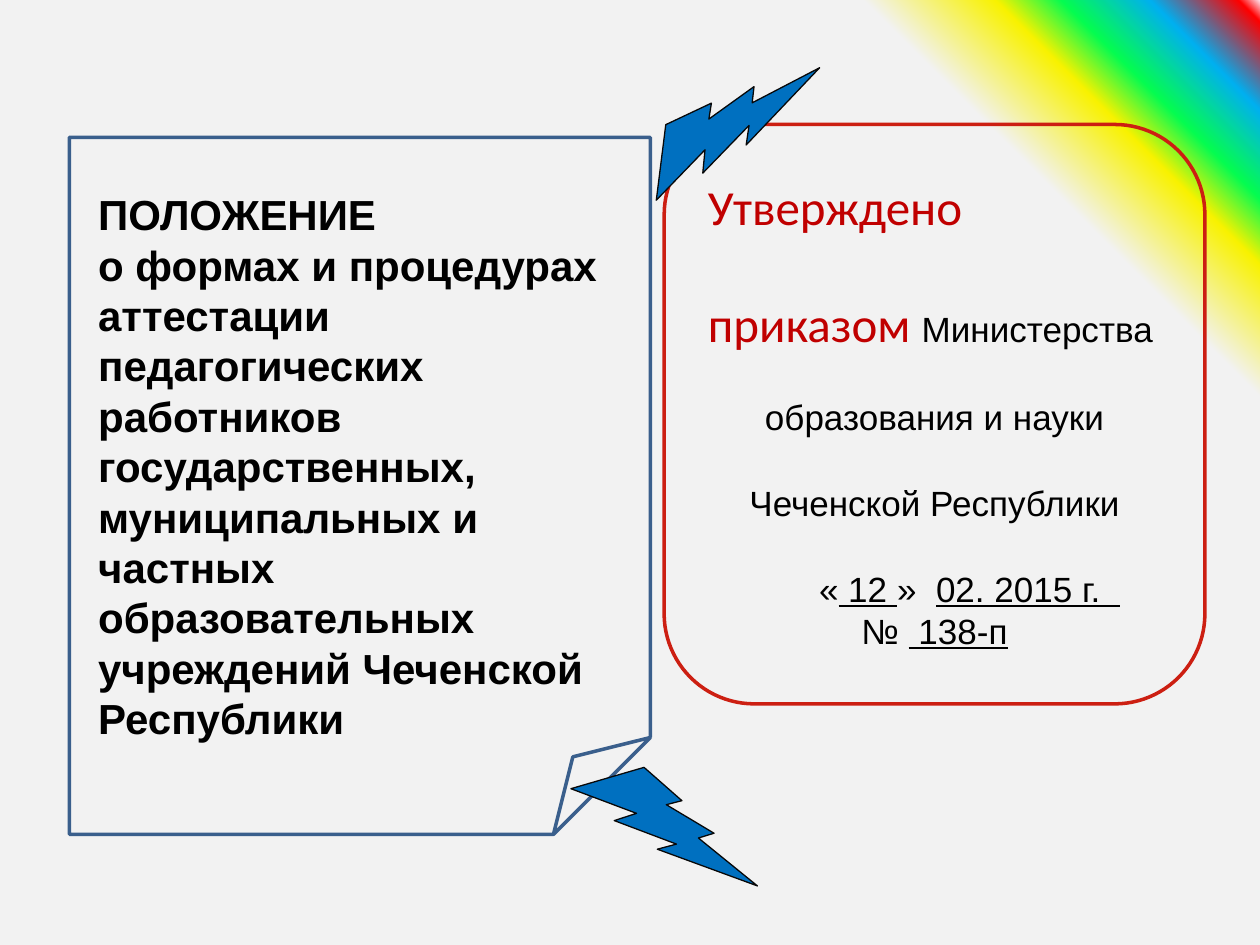
from dataclasses import dataclass

from pptx import Presentation
from pptx.dml.color import RGBColor
from pptx.enum.shapes import MSO_SHAPE
from pptx.enum.text import MSO_ANCHOR, PP_ALIGN
from pptx.oxml import parse_xml
from pptx.oxml.ns import nsdecls
from pptx.util import Cm, Pt


@dataclass(frozen=True)
class Theme:
    ink: str = "000000"
    accent: str = "C00000"
    card_line: str = "3A5F8C"
    order_line: str = "CC1F12"
    bolt: str = "0070C0"
    bolt_line: str = "080808"
    rainbow: tuple = ((82, "F2F2F2"), (88, "F8F200"), (91, "04FC51"),
                      (95, "00B0F0"), (99, "FF0000"), (100, "FEE7F2"))
    heading: int = 28
    title: int = 24
    body: int = 20


def add_run(p, text, size, color, font="Arial", bold=False, underline=False):
    r = p.add_run()
    r.text = text
    r.font.name, r.font.size = font, Pt(size)
    r.font.bold, r.font.underline = bold, underline
    r.font.color.rgb = RGBColor.from_string(color)


class SlideBuilder:
    def __init__(self, prs, theme):
        self.theme = theme
        self.s = prs.slides.add_slide(prs.slide_layouts[6])

    def background(self):
        """Circular rainbow spreading from the bottom left corner."""
        stops = "".join(
            f'<a:gs pos="{pos * 1000}"><a:srgbClr val="{color}"/></a:gs>'
            for pos, color in self.theme.rainbow)
        bg = parse_xml(
            f'<p:bg {nsdecls("p", "a")}><p:bgPr><a:gradFill rotWithShape="1">'
            f'<a:gsLst>{stops}</a:gsLst><a:path path="circle">'
            '<a:fillToRect t="100000" r="100000"/></a:path></a:gradFill>'
            '<a:effectLst/></p:bgPr></p:bg>')
        self.s.shapes.element.addprevious(bg)

    def shape(self, kind, box, line, width, fill=None, rotation=0, parent=None):
        shapes = (parent or self.s).shapes
        sp = shapes.add_shape(kind, *map(Cm, box))
        sp.shadow.inherit = False
        sp.rotation = rotation
        sp.line.color.rgb = RGBColor.from_string(line)
        sp.line.width = Pt(width)
        if fill:
            sp.fill.solid()
            sp.fill.fore_color.rgb = RGBColor.from_string(fill)
        else:
            sp.fill.background()
        return sp

    def text_box(self, box, lines, parent, **style):
        tf = parent.shapes.add_textbox(*map(Cm, box)).text_frame
        tf.word_wrap = True
        for i, text in enumerate(lines):
            add_run(self.paragraph(tf, i), text, **style)

    def paragraph(self, tf, index, align=PP_ALIGN.LEFT, before=0, indent=0):
        p = tf.add_paragraph() if index else tf.paragraphs[0]
        p.alignment, p.space_before = align, Pt(before)
        if indent:
            p._p.get_or_add_pPr().set("marL", str(Cm(indent)))
        return p

    def regulation_card(self, lines):
        t = self.theme
        group = self.s.shapes.add_group_shape()
        self.shape(MSO_SHAPE.FOLDED_CORNER, (1.4, 2.77, 11.71, 14.05),
                   t.card_line, 2, parent=group)
        self.text_box((1.73, 3.68, 11.05, 12.22), lines, group,
                      size=t.title, color=t.ink, bold=True)

    def order_card(self, paragraphs):
        """Each paragraph is (format, runs); a run is (text, format)."""
        sp = self.shape(MSO_SHAPE.ROUNDED_RECTANGLE, (13.39, 2.51, 10.9, 11.68),
                        self.theme.order_line, 2)
        tf = sp.text_frame
        tf.word_wrap = True
        tf.vertical_anchor = MSO_ANCHOR.MIDDLE
        for i, (layout, runs) in enumerate(paragraphs):
            p = self.paragraph(tf, i, **layout)
            for text, style in runs:
                add_run(p, text, **style)

    def bolt(self, left, top, rotation=0):
        self.shape(MSO_SHAPE.LIGHTNING_BOLT, (left, top, 3.76, 2.39),
                   self.theme.bolt_line, 0.75, self.theme.bolt, rotation)


def main():
    prs = Presentation()
    prs.slide_width, prs.slide_height = Cm(25.4), Cm(19.05)
    theme = Theme()
    slide = SlideBuilder(prs, theme)
    slide.background()
    slide.regulation_card([
        "ПОЛОЖЕНИЕ",
        "о формах и процедурах аттестации педагогических работников",
        "государственных, муниципальных и частных образовательных "
        "учреждений Чеченской Республики",
    ])

    red = dict(size=theme.heading, color=theme.accent, font="Calibri")
    plain = dict(size=theme.body, color=theme.ink)
    under = dict(plain, underline=True)
    center = dict(align=PP_ALIGN.CENTER)
    slide.order_card([
        (dict(indent=0.1), [("Утверждено", red)]),
        (dict(indent=0.1, before=33),
         [("приказом ", red), ("Министерства", plain)]),
        (dict(center, before=25), [("образования и науки", plain)]),
        (dict(center, before=25), [("Чеченской Республики", plain)]),
        (dict(indent=2.34, before=25),
         [("«", plain), (" 12 ", under), ("»  ", plain),
          ("02. 2015 г.  ", under)]),
        (center, [("№ ", plain), (" 138-п", under)]),
    ])
    slide.bolt(12.8, 1.42, rotation=293.4)
    slide.bolt(11.51, 15.47)
    prs.save("out.pptx")


if __name__ == "__main__":
    main()
